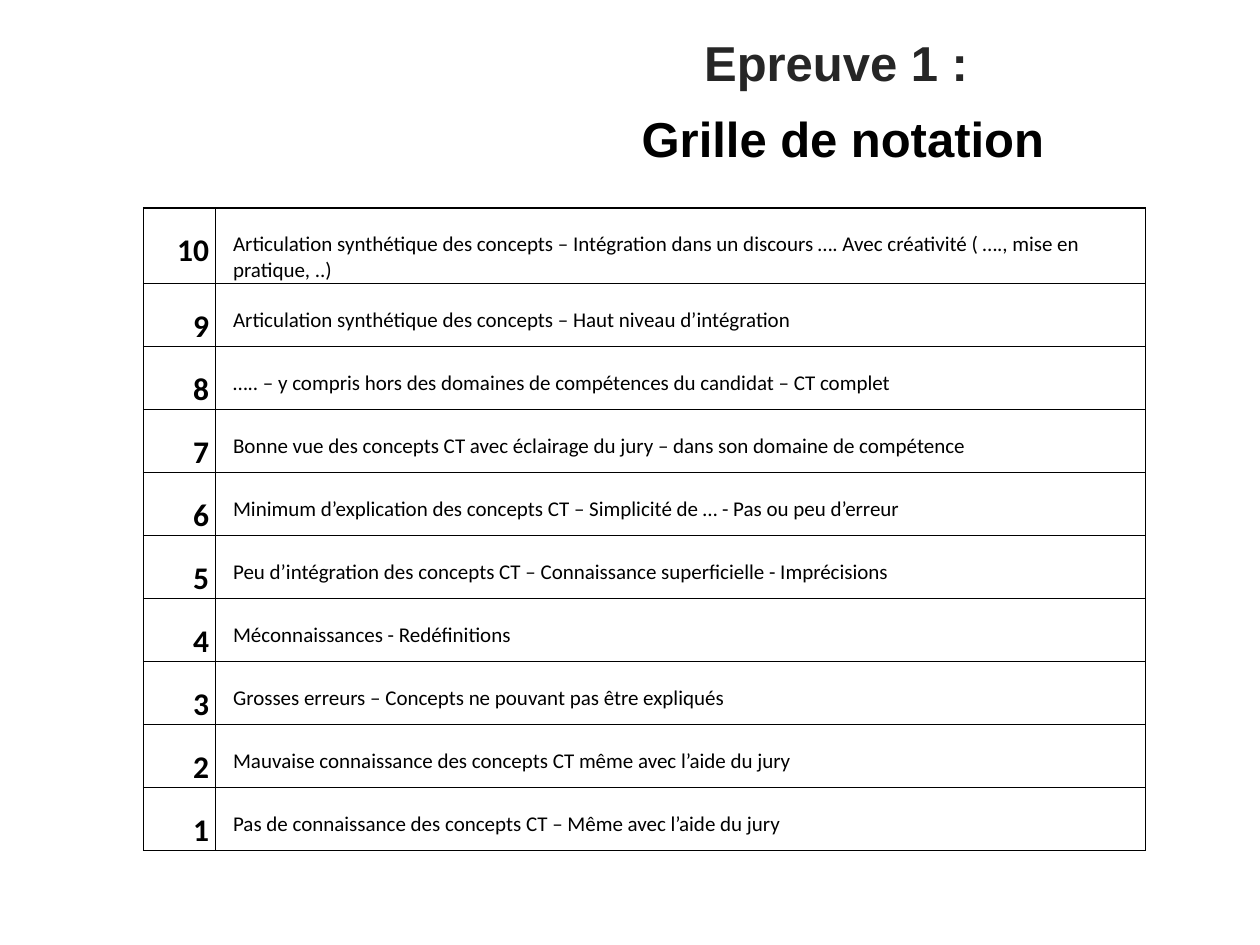
from lxml.etree import SubElement
from pptx import Presentation
from pptx.dml.color import RGBColor
from pptx.enum.text import MSO_ANCHOR as Anchor, PP_ALIGN as Align
from pptx.oxml.ns import qn
from pptx.util import Inches, Pt

BLACK = RGBColor(0x00, 0x00, 0x00)
CHARCOAL = RGBColor(0x26, 0x26, 0x26)
SHADE = RGBColor(0xEE, 0xEC, 0xE1)

LEVELS = [
    "Articulation synthétique des concepts – Intégration dans un discours …. Avec créativité ( …., mise en pratique, ..)",
    "Articulation synthétique des concepts – Haut niveau d’intégration",
    "….. – y compris hors des domaines de compétences du candidat – CT complet",
    "Bonne vue des concepts CT avec éclairage du jury – dans son domaine de compétence",
    "Minimum d’explication des concepts CT – Simplicité de … - Pas ou peu d’erreur",
    "Peu d’intégration des concepts CT – Connaissance superficielle - Imprécisions",
    "Méconnaissances - Redéfinitions",
    "Grosses erreurs – Concepts ne pouvant pas être expliqués",
    "Mauvaise connaissance des concepts CT même avec l’aide du jury",
    "Pas de connaissance des concepts CT – Même avec l’aide du jury",
]
COLUMNS = [0.57, 7.38]
ROW, TOP_ROW = 0.5, 0.6


def write(para, text, color, **format_values):
    span = para.add_run()
    span.text = text
    span.font.color.rgb = color
    for name, value in format_values.items():
        setattr(span.font, name, value)
    return span


def outline(cell, width):
    props = cell._tc.get_or_add_tcPr()
    for position, side in enumerate(("lnL", "lnR", "lnT", "lnB")):
        line = props.makeelement(qn(f"a:{side}"), {"w": str(width)})
        fill = SubElement(line, qn("a:solidFill"))
        SubElement(fill, qn("a:srgbClr"), val=str(BLACK))
        props.insert(position, line)


deck = Presentation()
deck.slide_width, deck.slide_height = Inches(10), Inches(7.5)
page = deck.slides.add_slide(deck.slide_layouts[6])

# Marking grid: score on the left, description on the right
height = TOP_ROW + ROW * (len(LEVELS) - 1)
grid = page.shapes.add_table(len(LEVELS), len(COLUMNS), Inches(1.14), Inches(1.65),
                             Inches(sum(COLUMNS)), Inches(height)).table
grid.first_row = grid.horz_banding = False
for column, width in zip(grid.columns, COLUMNS):
    column.width = Inches(width)

for index, level in enumerate(LEVELS):
    grid.rows[index].height = Inches(ROW if index else TOP_ROW)
    score = str(len(LEVELS) - index)
    for cell, text, size, bold, align in (
            (grid.cell(index, 0), score, 18, True, Align.RIGHT),
            (grid.cell(index, 1), level, 12, False, Align.LEFT)):
        cell.fill.background()
        cell.margin_left = cell.margin_right = Inches(0.05)
        cell.margin_top, cell.margin_bottom = Inches(0.19), 0
        outline(cell, Pt(1))
        para = cell.text_frame.paragraphs[0]
        para.alignment = align
        if align == Align.LEFT:
            para._p.get_or_add_pPr().set("marL", str(Inches(0.09)))
        write(para, text, color=BLACK, name="Calibri", size=Pt(size), bold=bold)

# Title, two centred lines with a pale text shadow
title = page.shapes.add_textbox(Inches(3.51), Inches(0.49), Inches(6.36), Inches(0.54))
frame = title.text_frame
frame.word_wrap = True
frame.vertical_anchor = Anchor.MIDDLE
frame.margin_top = Inches(0.11)
for index, (text, color) in enumerate((("Epreuve 1 : ", CHARCOAL), ("Grille de notation", BLACK))):
    para = frame.add_paragraph() if index else frame.paragraphs[0]
    para.alignment = Align.CENTER
    if index:
        para.space_before = Pt(10)
    span = write(para, text, color, name="Arial", size=Pt(28), bold=True)
    effects = span.font._element.makeelement(qn("a:effectLst"), {})
    shadow = SubElement(effects, qn("a:outerShdw"), dist=str(Pt(3)), dir="2700000")
    SubElement(shadow, qn("a:srgbClr"), val=str(SHADE))
    span.font._element.find(qn("a:solidFill")).addnext(effects)

deck.save("out.pptx")
